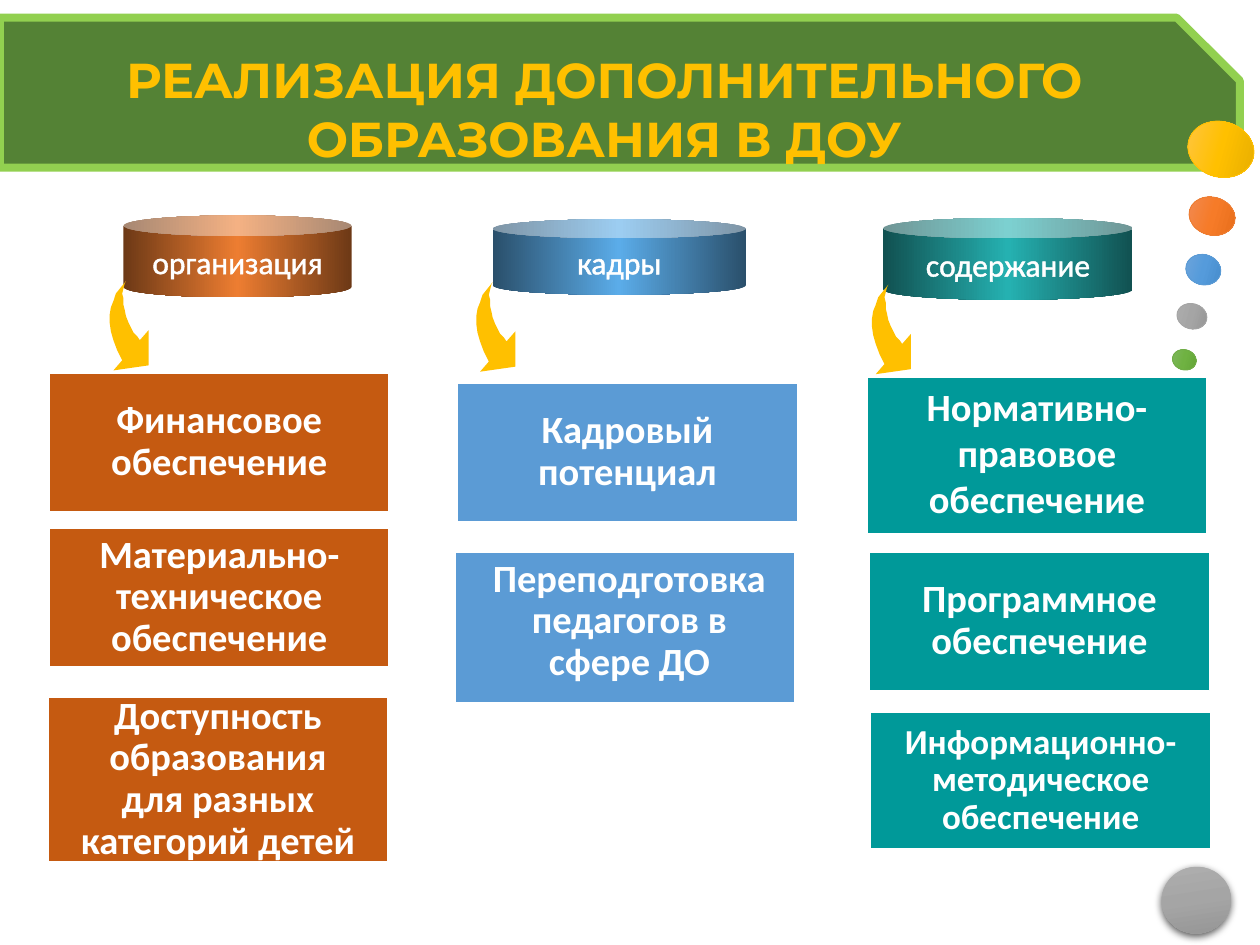
import pptx
import pptx.util
import pptx.dml.color
import pptx.enum.shapes
import pptx.enum.text
import pptx.oxml
import pptx.oxml.ns
import lxml.etree

SHAPE = pptx.enum.shapes.MSO_SHAPE
ANCHOR = pptx.enum.text.MSO_ANCHOR
CELL = pptx.util.Inches(0.1)  # the slide is a grid of 100 columns by 75 rows
COLUMNS, ROWS = 100, 75

COLORS = {
    "white": "FFFFFF", "banner": "548235", "banner_edge": "92D050",
    "gold": "FFC000", "gold_edge": "BD8E00",
    "rust": "C55A11", "blue": "5B9BD5", "teal": "009999",
    "can_orange": "ED7D31", "can_blue": "5BACE9", "can_teal": "25B1B1",
}
GRAY_STOPS = ("AFAFAF", "A5A5A5", "939393")
TITLE_STOPS = [(0, "7F5F00"), (43, "FFC000"), (48, "EEB300"), (100, "7F5F00")]

# Dots: left, top, width, height, gradient, edge
DOTS = [
    (94.7, 9.2, 4.4, 5.3, ("FFC64B", "FFC000", "E3AB00"), "FFC000"),
    (94.7, 15.3, 3, 3.7, ("F18C57", "F67B28", "E56C19"), "ED7D31"),
    (94.3, 20, 2.4, 2.8, ("71A6DB", "559BDB", "448ACA"), "5B9BD5"),
    (93.6, 23.9, 2, 2.4, GRAY_STOPS, "A5A5A5"),
    (93.2, 27.6, 1.6, 1.9, ("81B861", "6FB242", "62A336"), "70AD47"),
]
# Headings: text, cell area, colour, tip of the arrow below
HEADINGS = [
    ("организация", (9.8, 17.1, 18.1, 6.5), "can_orange", (10, 22.3)),
    ("кадры", (39.1, 17.4, 20.1, 6), "can_blue", (39.1, 22.4)),
    ("содержание", (70.1, 17.3, 19.8, 6.5), "can_teal", (70.5, 22.6)),
]
# Cards: text, left, top, height, colour, text size
CARD_WIDTH = 27
CARDS = [
    ("Финансовое обеспечение", 3.9, 29.6, 11, "rust", 22),
    ("Материально-техническое обеспечение", 3.9, 41.9, 11, "rust", 22),
    ("Доступность образования для разных категорий детей", 3.8, 55.3, 13.1, "rust", 22),
    ("Кадровый потенциал", 36.3, 30.4, 11, "blue", 22),
    ("Программное обеспечение", 69, 43.8, 11, "teal", 22),
    ("Информационно-методическое обеспечение", 69.1, 56.5, 10.9, "teal", 20),
]
# Curved arrow outline in hundredths of an inch from its tip
ARROW = [
    (-4, 5), (-8, 10), (-10, 16), (-12, 21), (-13, 27), (-13, 33), (-12, 40),
    (-10, 47), (-7, 55), (-3, 63), (-10, 71), (18, 67), (18, 39), (11, 47),
    (9, 44), (6, 41), (4, 37), (2, 33), (0, 28), (-1, 23), (-2, 19),
    (-2, 14), (-3, 10), (-2, 6), (-1, 2),
]


def rgb(value):
    return pptx.dml.color.RGBColor.from_string(COLORS.get(value, value))


def cells(*lengths):
    return [round(length * CELL) for length in lengths]


def xml(markup):
    return pptx.oxml.parse_xml(
        markup.replace(">", f" {pptx.oxml.ns.nsdecls('a')}>", 1))


def set_gradient(fill, parent, stops, angle):
    """Stops are (percent, colour) or (percent, colour, shade)."""
    fill.gradient()
    gradient = parent.find(pptx.oxml.ns.qn("a:gradFill"))
    stop_list = gradient.find(pptx.oxml.ns.qn("a:gsLst"))
    for stop in list(stop_list):
        stop_list.remove(stop)
    for percent, color, *shade in stops:
        change = "".join(f'<a:gamma/><a:shade val="{s}"/><a:invGamma/>' for s in shade)
        stop_list.append(xml(f'<a:gs pos="{percent * 1000}"><a:srgbClr val="{color}">'
                             f'{change}</a:srgbClr></a:gs>'))
    gradient.find(pptx.oxml.ns.qn("a:lin")).set("ang", str(angle * 60000))


def set_line(shape, color=None, width=1):
    if color is None:
        shape.line.fill.background()
    else:
        shape.line.color.rgb = rgb(color)
        shape.line.width = pptx.util.Pt(width)


def add_preset(page, kind, area, fill=None, line=None, width=1):
    shape = page.shapes.add_shape(kind, *cells(*area))
    shape.shadow.inherit = False
    if fill:
        shape.fill.solid()
        shape.fill.fore_color.rgb = rgb(fill)
    set_line(shape, line, width)
    return shape


def write(shape, text, size, font="Calibri", bold=True, inset=None, spacing=None):
    frame = shape.text_frame
    frame.text = text
    frame.word_wrap = True
    frame.vertical_anchor = ANCHOR.MIDDLE
    if inset:
        frame.margin_left = frame.margin_right = inset
        frame.margin_top = frame.margin_bottom = inset
    para = frame.paragraphs[0]
    para.alignment = pptx.enum.text.PP_ALIGN.CENTER
    if spacing:
        para.line_spacing = spacing
    span = para.runs[0]
    span.font.name, span.font.bold = font, bold
    span.font.size = pptx.util.Pt(size)
    span.font.color.rgb = rgb("white")
    return span


def outline_text(span, color, width):
    span.font._element.insert(0, xml(
        f'<a:ln w="{round(width * 12700)}"><a:solidFill><a:srgbClr val="{COLORS[color]}"/>'
        '</a:solidFill></a:ln>'))


def add_dot(page, area, colors, turn, edge=None):
    dot = add_preset(page, SHAPE.FLOWCHART_CONNECTOR, area, line=edge, width=0.5)
    set_gradient(dot.fill, dot._element.spPr, zip((0, 50, 100), colors), 90)
    dot.rotation = turn
    return dot


def add_banner(page):
    banner = add_preset(page, SHAPE.SNIP_1_RECTANGLE, (0, 1.4, 98.4, 11.9),
                        "banner", "banner_edge", 4.5)
    banner.adjustments[0] = 0.42
    span = write(banner, "РЕАЛИЗАЦИЯ ДОПОЛНИТЕЛЬНОГО ОБРАЗОВАНИЯ В ДОУ", 28, "Montserrat")
    set_gradient(span.font.fill, span.font._element, TITLE_STOPS, 90)
    outline_text(span, "gold_edge", 0.71)


def add_can(page, text, area, color):
    can = add_preset(page, SHAPE.CAN, area)
    can.adjustments[0] = 0.25
    base = COLORS[color]
    set_gradient(can.fill, can._element.spPr,
                 [(0, base, 46275), (50, base), (100, base, 46275)], 0)
    span = write(can, text, 18, bold=False)
    can.text_frame.word_wrap = False
    outline_text(span, "white", 1.45)


def add_arrow(page, tip):
    builder = page.shapes.build_freeform(0, 0, scale=CELL / 10)
    builder.add_line_segments(ARROW, close=True)
    arrow = builder.convert_to_shape(*cells(*tip))
    arrow.shadow.inherit = False
    arrow.fill.solid()
    arrow.fill.fore_color.rgb = rgb("gold")
    set_line(arrow)


def write_card(shape, text, size):
    write(shape, text, size, inset=cells(2.4)[0], spacing=0.9)


def main():
    deck = pptx.Presentation()
    deck.slide_width, deck.slide_height = cells(COLUMNS, ROWS)
    page = deck.slides.add_slide(deck.slide_layouts[6])

    # Corner circle with a soft shadow
    circle = add_dot(page, (92.2, 68.8, 5.5, 5.3), GRAY_STOPS, 351.1)
    effects = circle._element.spPr.find(pptx.oxml.ns.qn("a:effectLst"))
    effects.append(xml(
        '<a:outerShdw blurRad="57150" dist="19050" dir="5400000" algn="ctr" rotWithShape="0">'
        '<a:srgbClr val="000000"><a:alpha val="63000"/></a:srgbClr></a:outerShdw>'))

    # Title banner and the trail of dots
    add_banner(page)
    for *area, colors, edge in DOTS:
        add_dot(page, area, colors, 285.6, edge)

    # Column headings with their arrows
    for text, area, color, tip in HEADINGS:
        add_can(page, text, area, color)
        add_arrow(page, tip)

    # Cards
    for text, left, top, height, color, size in CARDS:
        card = add_preset(page, SHAPE.RECTANGLE, (left, top, CARD_WIDTH, height), color, "white")
        write_card(card, text, size)

    # Card with single-spaced text from the top
    legal = add_preset(page, SHAPE.RECTANGLE, (68.8, 29.9, CARD_WIDTH, 12.5), "teal", "white")
    write(legal, "Нормативно-правовое обеспечение", 22)
    legal.text_frame.vertical_anchor = ANCHOR.TOP

    # Card whose text sits a little off its centre
    add_preset(page, SHAPE.RECTANGLE, (36.1, 43.8, CARD_WIDTH, 12), "blue", "white")
    box = page.shapes.add_textbox(*cells(35.5, 45.8, 28.9, 7))
    write_card(box, "Переподготовка педагогов в сфере ДО", 22)

    deck.save("out.pptx")


if __name__ == "__main__":
    main()
